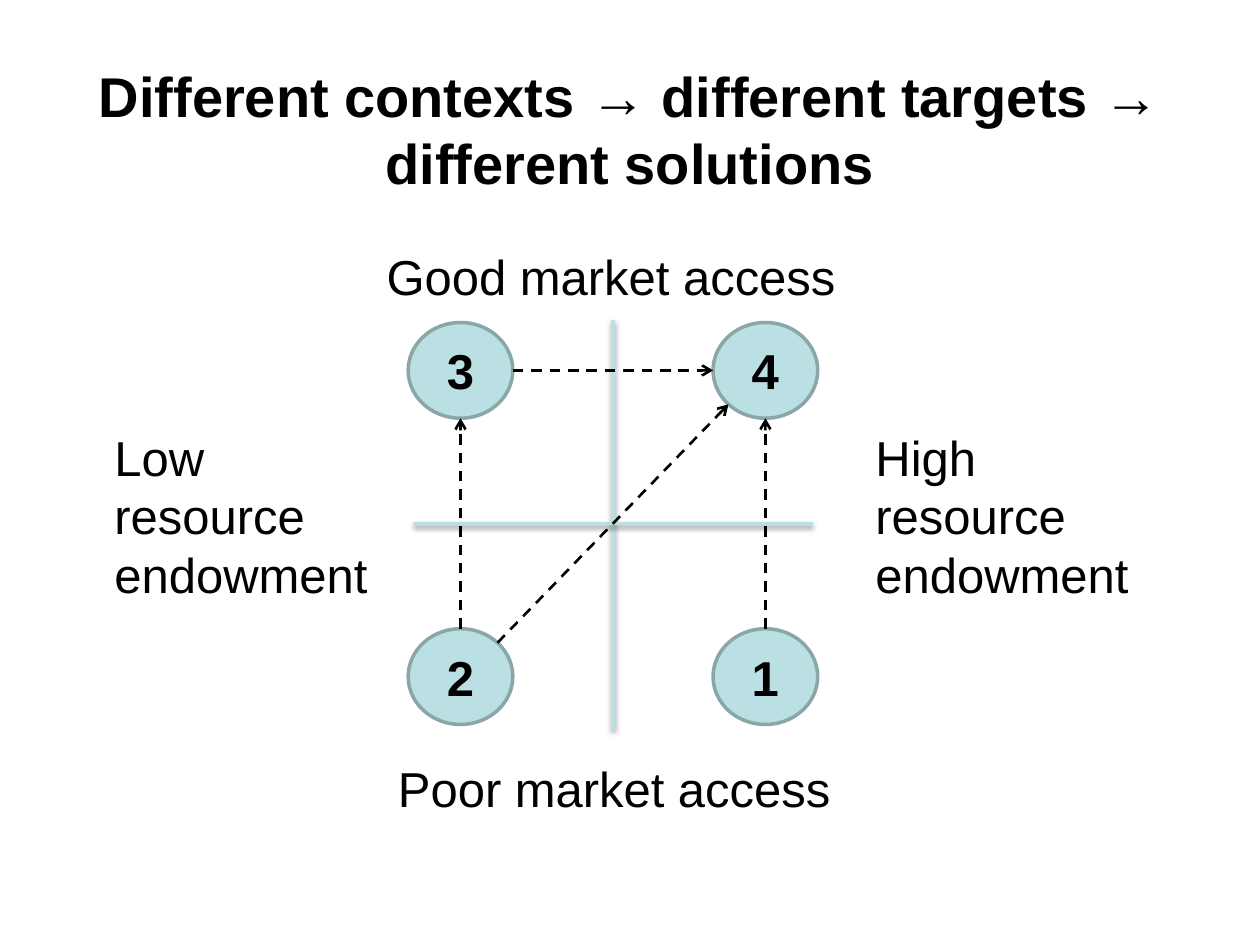
from dataclasses import dataclass
from math import sqrt

from lxml.etree import SubElement
from pptx import Presentation
from pptx.dml.color import RGBColor
from pptx.enum.dml import MSO_LINE
from pptx.enum.shapes import MSO_CONNECTOR, MSO_SHAPE
from pptx.enum.text import MSO_ANCHOR, MSO_AUTO_SIZE, PP_ALIGN
from pptx.oxml.ns import qn
from pptx.util import Inches, Pt


@dataclass(frozen=True)
class Theme:
    font: str = "Arial"
    ink: RGBColor = RGBColor(0x00, 0x00, 0x00)
    pale: RGBColor = RGBColor(0xBB, 0xE0, 0xE3)
    edge: RGBColor = RGBColor(0x8A, 0xA6, 0xA8)
    title_size: Pt = Pt(32)
    body_size: Pt = Pt(28)
    outline: Pt = Pt(2)
    arrow: Pt = Pt(1.5)


THEME = Theme()
CELL = Inches(0.1)  # the slide is a grid of 100 columns by 75 rows
COLUMNS, ROWS = 100, 75


@dataclass(frozen=True)
class Box:
    """An area in grid columns and rows."""
    left: float
    top: float
    width: float
    height: float

    def point(self, across, down):
        """The point at the given shares of the width and height."""
        return self.left + across * self.width, self.top + down * self.height

    def emu(self):
        return [round(n * CELL) for n in (self.left, self.top, self.width, self.height)]


def write(frame, wording, size, bold=False, align=PP_ALIGN.LEFT):
    paragraph = frame.paragraphs[0]
    paragraph.alignment = align
    run = paragraph.add_run()
    run.text = wording
    run.font.name, run.font.size, run.font.bold = THEME.font, size, bold
    run.font.color.rgb = THEME.ink


def add_line(slide, start, end, color, width):
    """Draw a straight line and return it with its empty effect list."""
    ends = [round(n * CELL) for n in (*start, *end)]
    line = slide.shapes.add_connector(MSO_CONNECTOR.STRAIGHT, *ends)
    line.line.color.rgb = color
    line.line.width = width
    return line, SubElement(line._element.spPr, qn("a:effectLst"))


def add_axis(slide, start, end):
    _, effects = add_line(slide, start, end, THEME.pale, THEME.outline)
    shadow = SubElement(effects, qn("a:outerShdw"), blurRad=str(Pt(3.1)),
                        dist=str(Pt(1.6)), dir="5400000", rotWithShape="0")
    shade = SubElement(shadow, qn("a:srgbClr"), val=str(THEME.ink))
    SubElement(shade, qn("a:alpha"), val="38000")


def add_arrow(slide, start, end):
    arrow, _ = add_line(slide, start, end, THEME.ink, THEME.arrow)
    arrow.line.dash_style = MSO_LINE.DASH
    SubElement(arrow.line._get_or_add_ln(), qn("a:tailEnd"), type="arrow")


def add_label(slide, box, wording, wrap):
    frame = slide.shapes.add_textbox(*box.emu()).text_frame
    frame.word_wrap = wrap
    frame.auto_size = MSO_AUTO_SIZE.SHAPE_TO_FIT_TEXT
    write(frame, wording, THEME.body_size)


def add_context(slide, box, number):
    circle = slide.shapes.add_shape(MSO_SHAPE.OVAL, *box.emu())
    circle.shadow.inherit = False
    circle.fill.solid()
    circle.fill.fore_color.rgb = THEME.pale
    circle.line.color.rgb = THEME.edge
    circle.line.width = THEME.outline
    circle.text_frame.vertical_anchor = MSO_ANCHOR.MIDDLE
    write(circle.text_frame, number, THEME.body_size, True, PP_ALIGN.CENTER)


def add_title(slide, box, wording):
    title = slide.shapes.title
    title.left, title.top, title.width, title.height = box.emu()
    title.text_frame.vertical_anchor = MSO_ANCHOR.TOP
    title.text_frame.auto_size = MSO_AUTO_SIZE.NONE
    write(title.text_frame, wording, THEME.title_size, True, PP_ALIGN.CENTER)


def add_axis_labels(slide, box):
    """Name the four ends of the axes around the quadrant box."""
    left, top = box.left, box.top
    right, bottom = box.point(1, 1)
    for label_box, wording, wrap in (
        (Box(left - 2.7, top - 6.5, 38.1, 5.7), "Good market access", False),
        (Box(left - 1.8, bottom + 2.2, 36.8, 5.7), "Poor market access", False),
        (Box(right + 3.6, top + 7.8, 23.3, 15.1), "High resource endowment", True),
        (Box(left - 24.3, top + 7.8, 24.2, 15.1), "Low resource endowment", True),
    ):
        add_label(slide, label_box, wording, wrap)


def add_quadrants(slide, box):
    """Axes, one numbered context in each corner, and the paths between them."""
    middle_x, middle_y = box.point(0.5, 0.5)
    add_axis(slide, (middle_x, box.top - 0.2), (middle_x, box.top + 32.3))
    add_axis(slide, (box.left + 32.1, middle_y), (box.left + 0.4, middle_y))
    add_axis_labels(slide, box)

    width, height = 8.3, 7.6
    right, bottom = box.left + box.width - width, box.top + box.height - height
    contexts = {
        "1": Box(right, bottom, width, height),
        "2": Box(box.left, bottom, width, height),
        "3": Box(box.left, box.top, width, height),
        "4": Box(right, box.top, width, height),
    }
    for number, place in contexts.items():
        add_context(slide, place, number)

    near, far = 0.5 - sqrt(2) / 4, 0.5 + sqrt(2) / 4  # where a diagonal meets the rim
    for origin, leave, target, arrive in (
        ("3", (1, 0.5), "4", (0, 0.5)),
        ("2", (0.5, 0), "3", (0.5, 1)),
        ("1", (0.5, 0), "4", (0.5, 1)),
        ("2", (far, near), "4", (near, far)),
    ):
        add_arrow(slide, contexts[origin].point(*leave), contexts[target].point(*arrive))


def main():
    deck = Presentation()
    deck.slide_width, deck.slide_height = COLUMNS * CELL, ROWS * CELL
    slide = deck.slides.add_slide(deck.slide_layouts[5])
    add_title(slide, Box(5, 4.4, 90, 6.7),
              "Different contexts → different targets → different solutions")
    add_quadrants(slide, Box(32.4, 25.6, 32.5, 31.9))
    deck.save("out.pptx")


if __name__ == "__main__":
    main()
